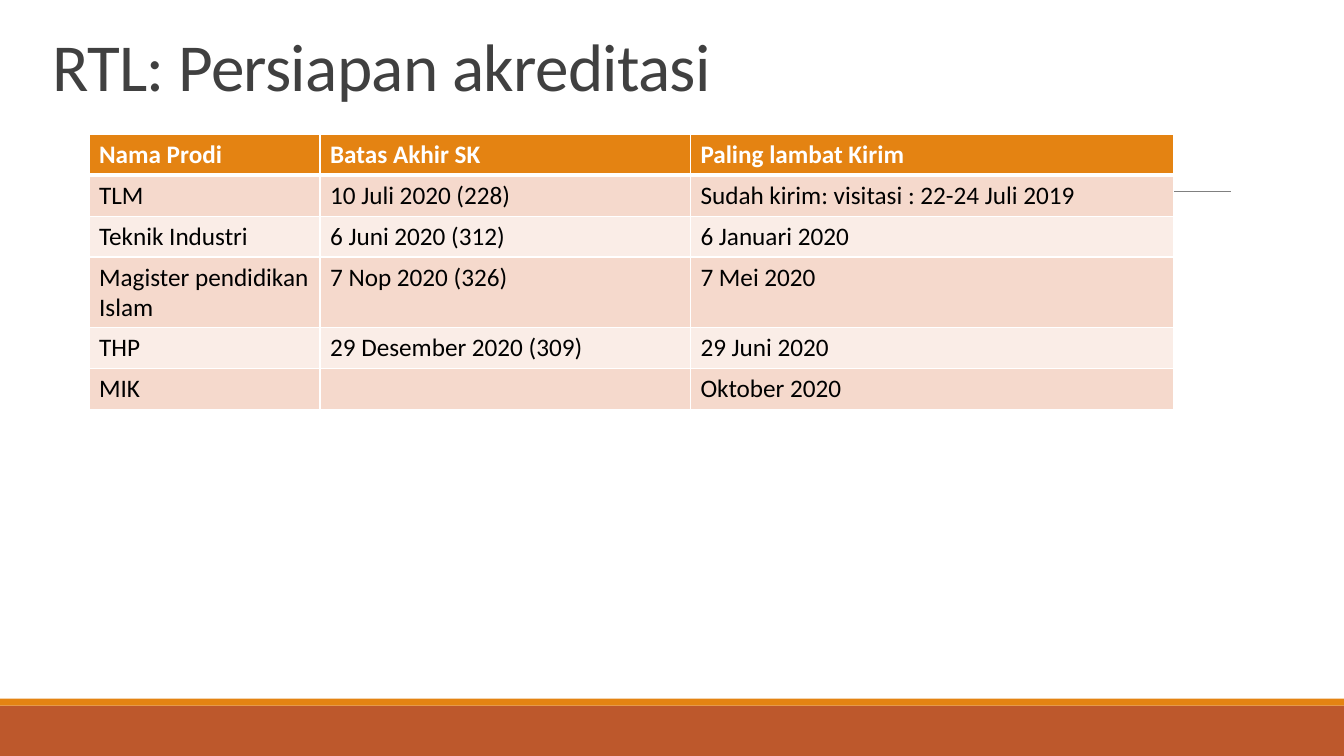
from lxml import etree
from pptx import Presentation
from pptx.dml.color import RGBColor
from pptx.enum import shapes, text
from pptx.oxml import ns
from pptx.util import Pt

WHITE = RGBColor(0xFF, 0xFF, 0xFF)
BLACK = RGBColor(0, 0, 0)
DARK = RGBColor(0x40, 0x40, 0x40)
GREY = RGBColor(0x80, 0x80, 0x80)
RUST = RGBColor(0xBD, 0x58, 0x2C)
ORANGE = RGBColor(0xE4, 0x83, 0x12)
ROSE = RGBColor(0xF5, 0xD9, 0xCC)
PALE = RGBColor(0xFA, 0xED, 0xE7)
FONT = "Calibri"


def style(para, size, color, bold=False):
    font = para.font
    font.name, font.size, font.bold = FONT, Pt(size), bold
    font.color.rgb = color


def edge(cell, side, width):
    props = cell._tc.get_or_add_tcPr()
    line = etree.SubElement(props, ns.qn("a:ln" + side), w=str(Pt(width)))
    fill = etree.SubElement(line, ns.qn("a:solidFill"))
    etree.SubElement(fill, ns.qn("a:srgbClr"), val=str(WHITE))


deck = Presentation()
deck.slide_width, deck.slide_height = Pt(960), Pt(540)
slide = deck.slides.add_slide(deck.slide_layouts[6])

# Footer bands
for top, height, color in ((504, 36, RUST), (499, 5, ORANGE)):
    band = slide.shapes.add_shape(
        shapes.MSO_SHAPE.RECTANGLE, 0, Pt(top), Pt(960), Pt(height))
    band.shadow.inherit = False
    band.fill.solid()
    band.fill.fore_color.rgb = color
    band.line.fill.background()

# Thin rule, partly behind the table
rule = slide.shapes.add_connector(
    shapes.MSO_CONNECTOR.STRAIGHT, Pt(94.3), Pt(136.6), Pt(879), Pt(136.6))
rule.line.color.rgb = GREY
rule.line.width = Pt(0.5)
etree.SubElement(rule._element.spPr, ns.qn("a:effectLst"))

# Title
box = slide.shapes.add_textbox(Pt(30.2), Pt(21.6), Pt(792), Pt(56.9))
frame = box.text_frame
frame.word_wrap = True
frame.vertical_anchor = text.MSO_ANCHOR.BOTTOM
title = frame.paragraphs[0]
run = title.add_run()
run.text = "RTL: Persiapan akreditasi"
title.line_spacing = 0.85
style(title, 48, DARK)
run.font._element.set("spc", "-50")

# Accreditation table
rows = (
    ("Nama Prodi", "Batas Akhir SK", "Paling lambat Kirim"),
    ("TLM", "10 Juli 2020 (228)", "Sudah kirim: visitasi : 22-24 Juli 2019"),
    ("Teknik Industri", "6 Juni 2020 (312)", "6 Januari 2020"),
    ("Magister pendidikan Islam", "7 Nop 2020 (326)", "7 Mei 2020"),
    ("THP", "29 Desember 2020 (309)", "29 Juni 2020"),
    ("MIK", "", "Oktober 2020"),
)
widths = (165, 264.6, 344.8)
table = slide.shapes.add_table(
    len(rows), len(widths), Pt(63.6), Pt(96), Pt(sum(widths)), Pt(175.2)).table
for col, width in zip(table.columns, widths):
    col.width = Pt(width)
for r, row in enumerate(rows):
    head = r == 0
    table.rows[r].height = Pt(29.2)
    for c, words in enumerate(row):
        cell = table.cell(r, c)
        for side in "LRTB":
            thick = (head and side == "B") or (r == 1 and side == "T")
            edge(cell, side, 3 if thick else 1)
        cell.fill.solid()
        cell.fill.fore_color.rgb = ORANGE if head else ROSE if r % 2 else PALE
        cell.text = words
        style(cell.text_frame.paragraphs[0], 18, WHITE if head else BLACK, head)

deck.save("out.pptx")
